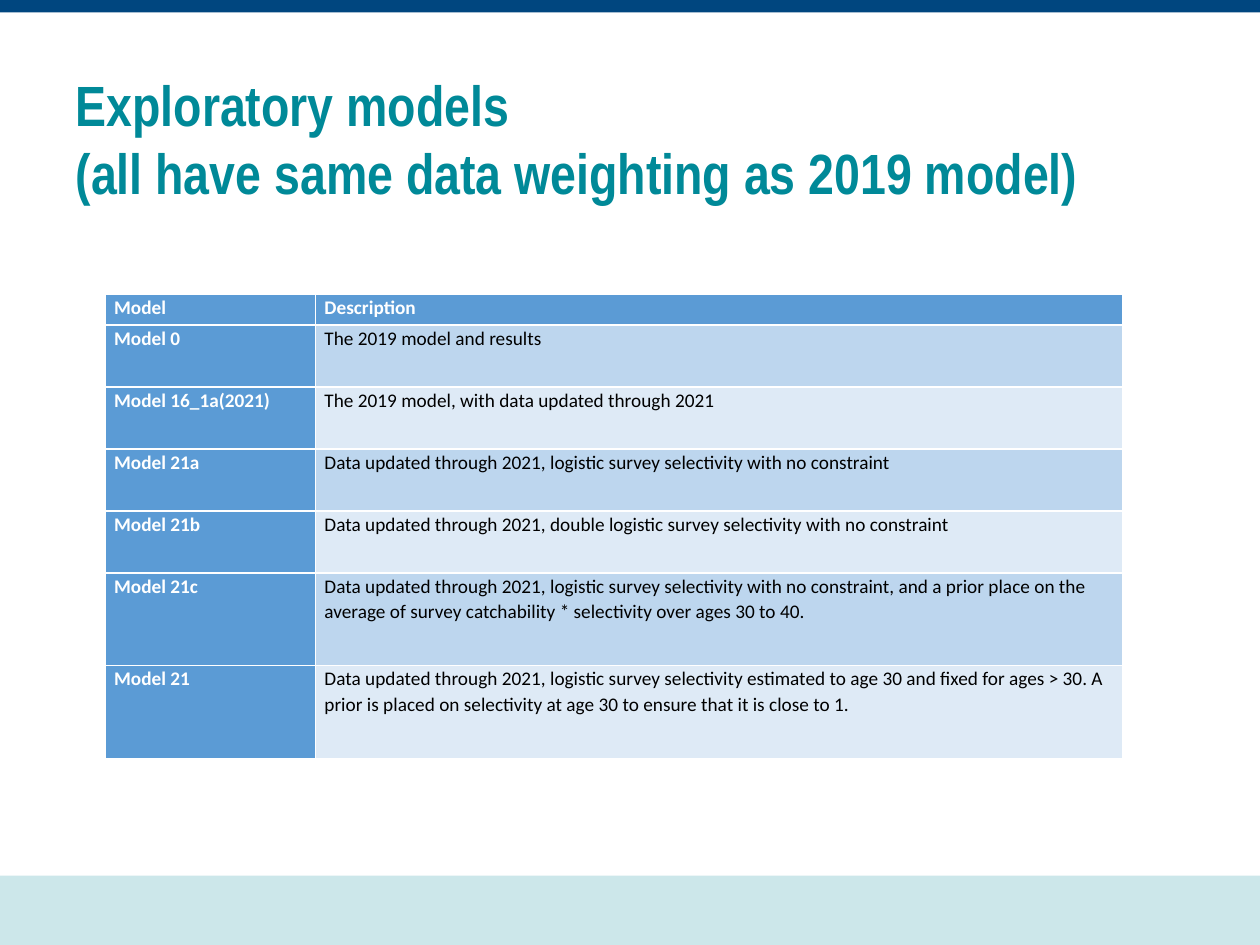
from dataclasses import dataclass

from lxml.etree import SubElement
from pptx import Presentation
from pptx.dml.color import RGBColor
from pptx.enum.shapes import MSO_SHAPE
from pptx.enum.text import MSO_ANCHOR, MSO_AUTO_SIZE, PP_ALIGN
from pptx.oxml.ns import qn
from pptx.util import Cm, Pt


@dataclass(frozen=True)
class Theme:
    top_band: str = "00467F"
    bottom_band: str = "CCE7EA"
    title: str = "008998"
    heading: str = "5B9BD5"
    stripes: tuple = ("BDD6EE", "DEEAF6")
    white: str = "FFFFFF"
    black: str = "000000"
    title_font: str = "Arial Narrow"
    table_font: str = "Calibri"
    title_size: float = 32.4
    table_size: float = 11
    border_width: float = 1


THEME = Theme()
SLIDE_WIDTH, SLIDE_HEIGHT = 25.4, 19.05
MODELS = [
    ("Model", "Description", 0.62),
    ("Model 0", "The 2019 model and results", 1.25),
    ("Model 16_1a(2021)", "The 2019 model, with data updated through 2021", 1.25),
    ("Model 21a", "Data updated through 2021, logistic survey selectivity with no constraint", 1.25),
    ("Model 21b", "Data updated through 2021, double logistic survey selectivity with no constraint", 1.25),
    ("Model 21c", "Data updated through 2021, logistic survey selectivity with no constraint, "
     "and a prior place on the average of survey catchability * selectivity over ages 30 to 40.", 1.87),
    ("Model 21", "Data updated through 2021, logistic survey selectivity estimated to age 30 "
     "and fixed for ages > 30. A prior is placed on selectivity at age 30 to ensure that "
     "it is close to 1.", 1.87),
]


def write(frame, text, *, font, size, color, bold=False, spacing=1.0):
    paragraph = frame.paragraphs[0]
    paragraph.text = text
    paragraph.alignment = PP_ALIGN.LEFT
    paragraph.line_spacing = spacing
    for run in paragraph.runs:
        run.font.name = font
        run.font.size = Pt(size)
        run.font.bold = bold
        run.font.color.rgb = RGBColor.from_string(color)


def add_band(slide, left, top, width, height, color):
    band = slide.shapes.add_shape(MSO_SHAPE.RECTANGLE, Cm(left), Cm(top), Cm(width), Cm(height))
    band.shadow.inherit = False
    band.fill.solid()
    band.fill.fore_color.rgb = RGBColor.from_string(color)
    band.line.fill.background()


def place_title(slide, left, top, width, height):
    title = slide.shapes.title
    title.left, title.top, title.width, title.height = map(Cm, (left, top, width, height))
    frame = title.text_frame
    frame.word_wrap = True
    frame.auto_size = MSO_AUTO_SIZE.NONE
    frame.vertical_anchor = MSO_ANCHOR.TOP
    write(frame, "Exploratory models\n(all have same data weighting as 2019 model)",
          font=THEME.title_font, size=THEME.title_size, color=THEME.title, bold=True)


def style_cell(cell, fill):
    cell.margin_left = cell.margin_right = Cm(0.18)
    cell.margin_top = cell.margin_bottom = 0
    properties = cell._tc.get_or_add_tcPr()
    for side in ("a:lnL", "a:lnR", "a:lnT", "a:lnB"):
        border = SubElement(properties, qn(side), w=str(Pt(THEME.border_width)))
        SubElement(SubElement(border, qn("a:solidFill")), qn("a:srgbClr"), val=THEME.white)
    cell.fill.solid()
    cell.fill.fore_color.rgb = RGBColor.from_string(fill)


def add_models(slide, left, top, width, name_width):
    height = sum(row_height for _, _, row_height in MODELS)
    models = slide.shapes.add_table(len(MODELS), 2, Cm(left), Cm(top), Cm(width), Cm(height)).table
    models.columns[0].width = Cm(name_width)
    models.columns[1].width = Cm(width - name_width)
    for row, (name, description, row_height) in enumerate(MODELS):
        models.rows[row].height = Cm(row_height)
        for column, text in enumerate((name, description)):
            is_heading = row == 0 or column == 0
            cell = models.cell(row, column)
            style_cell(cell, THEME.heading if is_heading else THEME.stripes[(row - 1) % 2])
            write(cell.text_frame, text, font=THEME.table_font, size=THEME.table_size,
                  color=THEME.white if is_heading else THEME.black,
                  bold=is_heading, spacing=1.07)


def main():
    deck = Presentation()
    deck.slide_width, deck.slide_height = Cm(SLIDE_WIDTH), Cm(SLIDE_HEIGHT)
    slide = deck.slides.add_slide(deck.slide_layouts[5])
    add_band(slide, 0, SLIDE_HEIGHT - 1.4, SLIDE_WIDTH, 1.4, THEME.bottom_band)
    add_band(slide, 0, 0, SLIDE_WIDTH, 0.25, THEME.top_band)
    place_title(slide, 1.27, 1.27, 22.86, 1.88)
    add_models(slide, 2.12, 5.93, 20.52, 4.24)
    deck.save("out.pptx")


if __name__ == "__main__":
    main()
